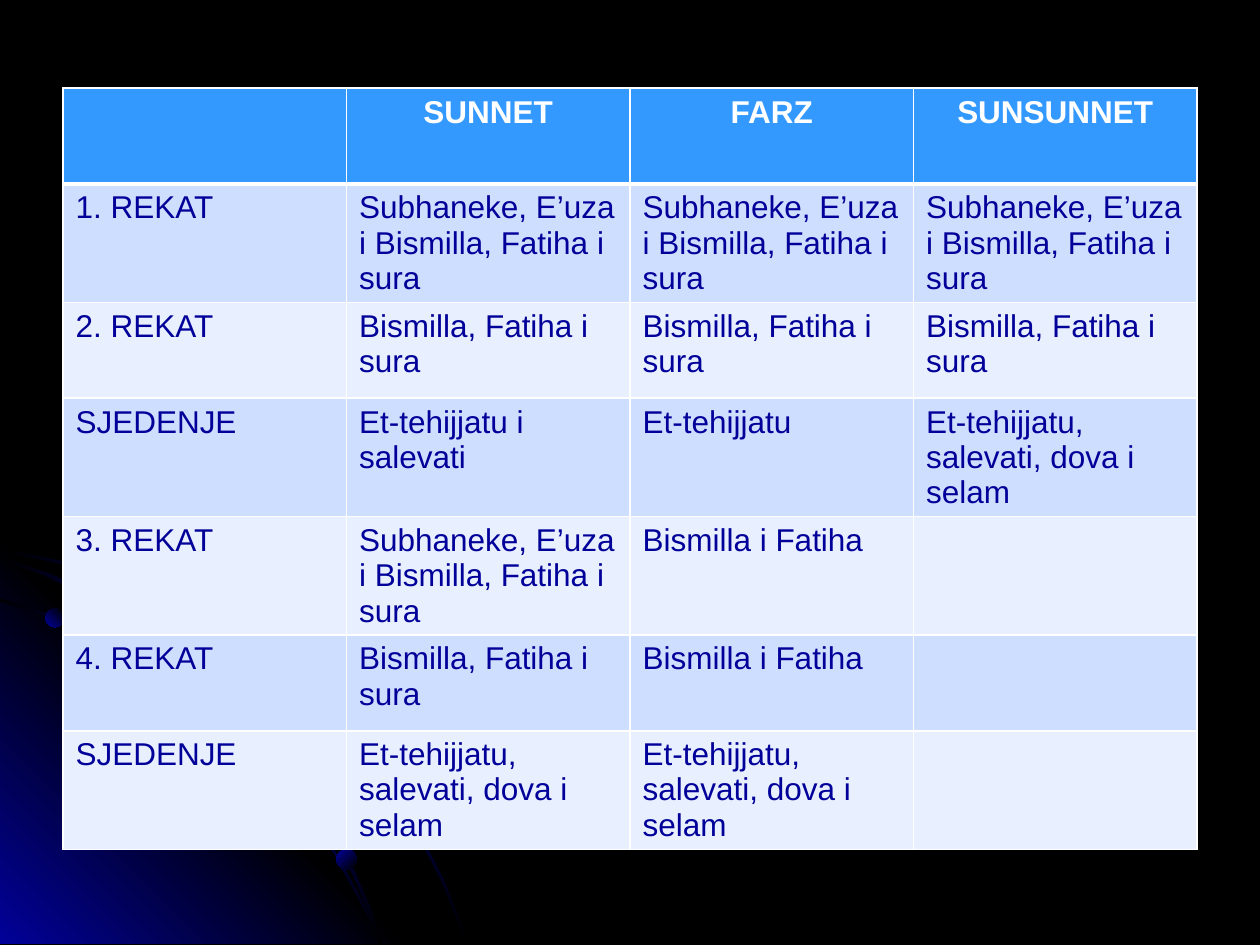
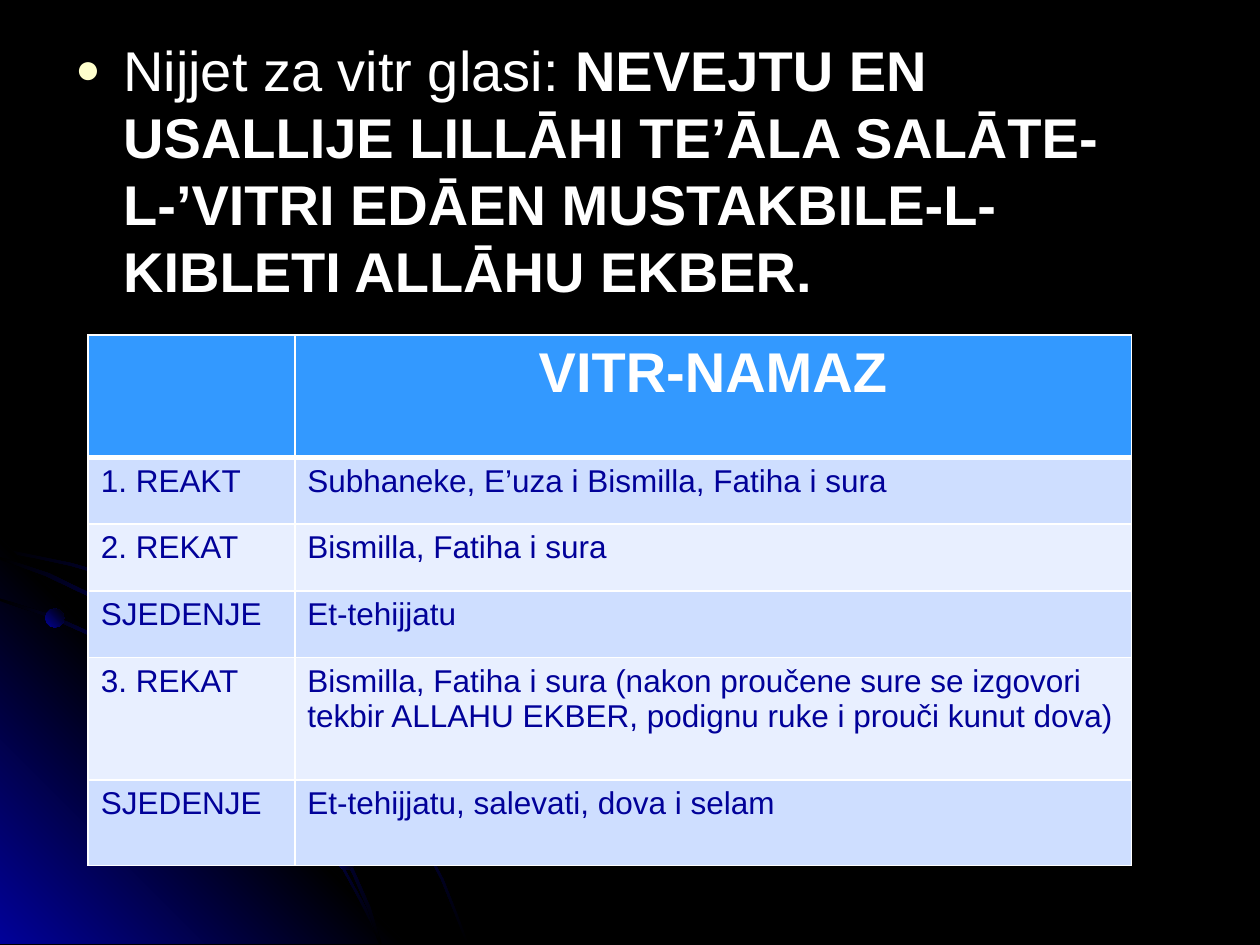
from lxml.etree import SubElement
from pptx import Presentation
from pptx.dml.color import RGBColor
from pptx.enum.shapes import MSO_SHAPE as SHAPE
from pptx.enum.text import PP_ALIGN as ALIGN
from pptx.oxml.ns import qn
from pptx.util import Inches, Pt

FONT = "Arial"
BLACK, WHITE, NAVY = "000000", "FFFFFF", "010199"
HEADER, BANDS = "3399FF", ("CEDEFF", "E8EFFF")
BULLET = "FFFFCC"


def rgb(color):
    return RGBColor.from_string(color)


def paint_gradient(shape, colors, angle):
    """Fill with evenly spaced colours; the angle runs counterclockwise."""
    shape.shadow.inherit = False
    shape.line.fill.background()
    shape.fill.gradient()
    shape.fill.gradient_angle = angle
    stops = shape._element.spPr.find(".//" + qn("a:gsLst"))
    stops.clear()
    for number, color in enumerate(colors):
        stop = SubElement(stops, qn("a:gs"), pos=str(100000 * number // (len(colors) - 1)))
        SubElement(stop, qn("a:srgbClr"), val=color)


# Background decoration: corner wedge, thin arcs and beads
upper_arc = [
    (0.57, 4.47), (0.28, 4.41), (0, 4.35), (0, 4.38), (0.28, 4.43), (0.56, 4.49),
    (0.97, 4.61), (1.35, 4.78), (1.73, 4.99), (2.08, 5.23), (2.41, 5.49), (2.71, 5.79),
    (2.98, 6.12), (3.23, 6.49), (3.37, 6.73), (3.5, 6.98), (3.6, 7.23), (3.7, 7.49),
    (3.72, 7.49), (3.62, 7.23), (3.52, 6.98), (3.39, 6.73), (3.25, 6.48), (3, 6.11),
    (2.72, 5.78), (2.42, 5.48), (2.09, 5.21), (1.74, 4.97), (1.36, 4.77), (0.98, 4.59),
]
lower_arc = [
    (2.85, 7.14), (2.94, 7.32), (3.01, 7.49), (3.03, 7.49), (2.96, 7.3), (2.86, 7.12),
    (2.66, 6.76), (2.42, 6.4), (2.15, 6.06), (1.84, 5.76), (1.52, 5.49), (1.17, 5.26),
    (0.79, 5.05), (0.41, 4.88), (0, 4.75), (0, 4.77), (0.39, 4.9), (0.77, 5.07),
    (1.15, 5.28), (1.5, 5.51), (1.83, 5.78), (2.13, 6.08), (2.4, 6.41), (2.65, 6.77),
]
middle_arc = [
    (0, 4.42), (0, 4.44), (0.36, 4.57), (0.74, 4.75), (1.09, 4.94), (1.42, 5.18),
    (1.73, 5.44), (2.02, 5.75), (2.27, 6.05), (2.52, 6.41), (2.67, 6.67), (2.8, 6.94),
    (2.92, 7.22), (3.01, 7.49), (3.03, 7.49), (2.94, 7.2), (2.82, 6.93), (2.69, 6.65),
    (2.54, 6.39), (2.29, 6.03), (2.04, 5.73), (1.75, 5.43), (1.44, 5.16), (1.11, 4.93),
    (0.76, 4.73), (0.39, 4.55),
]
wedge = [(3.22, 7.49), (0, 7.49), (0, 4.27)]
arc_colors = (BLACK, NAVY, BLACK)
outlines = [
    (upper_arc, arc_colors, 315),
    (wedge, (NAVY, BLACK, NAVY), 45),
    (lower_arc, arc_colors, 315),
    (middle_arc, arc_colors, 315),
]
beads = [(0.36, 4.83, 0.15, 45), (2.67, 6.74, 0.16, 315), (1.37, 4.73, 0.21, 45)]

# Table contents
opening = "Subhaneke, E’uza i Bismilla, Fatiha i sura"
sura = "Bismilla, Fatiha i sura"
fatiha = "Bismilla i Fatiha"
sitting = "Et-tehijjatu"
closing = "Et-tehijjatu, salevati, dova i selam"
prayer_rows = [
    ("", "SUNNET", "FARZ", "SUNSUNNET"),
    ("1. REKAT", opening, opening, opening),
    ("2. REKAT", sura, sura, sura),
    ("SJEDENJE", "Et-tehijjatu i salevati", sitting, closing),
    ("3. REKAT", opening, fatiha, ""),
    ("4. REKAT", sura, fatiha, ""),
    ("SJEDENJE", closing, closing, ""),
]
vitr_rows = [
    ("", "VITR-NAMAZ"),
    ("1. REAKT", opening),
    ("2. REKAT", sura),
    ("SJEDENJE", sitting),
    ("3. REKAT", sura + " (nakon proučene sure se izgovori tekbir ALLAHU EKBER, "
                        "podignu ruke i prouči kunut dova)"),
    ("SJEDENJE", closing),
]

deck = Presentation()
deck.slide_width, deck.slide_height = Inches(10), Inches(7.5)
master_fill = deck.slide_master.background.fill
master_fill.solid()
master_fill.fore_color.rgb = rgb(BLACK)

# Pages with the shared decoration
pages = [deck.slides.add_slide(deck.slide_layouts[6]) for _ in range(2)]
for page in pages:
    for points, colors, angle in outlines:
        corners = [(Inches(x), Inches(y)) for x, y in points]
        builder = page.shapes.build_freeform(*corners[0])
        builder.add_line_segments(corners[1:], close=True)
        paint_gradient(builder.convert_to_shape(), colors, angle)
    for left, top, size, angle in beads:
        bead = page.shapes.add_shape(
            SHAPE.OVAL, Inches(left), Inches(top), Inches(size), Inches(size))
        paint_gradient(bead, (NAVY, BLACK), angle)
prayer_page, vitr_page = pages

# Intention text on the vitr page
box = vitr_page.shapes.add_textbox(Inches(0.5), Inches(0.23), Inches(9), Inches(2.4))
box.text_frame.word_wrap = True
para = box.text_frame.paragraphs[0]
para.space_before = Pt(6.4)
layout = para._p.get_or_add_pPr()
layout.set("marL", str(Inches(0.38)))
layout.set("indent", str(-Inches(0.38)))
SubElement(SubElement(layout, qn("a:buClr")), qn("a:srgbClr"), val=BULLET)
SubElement(layout, qn("a:buSzPct"), val="75000")
SubElement(layout, qn("a:buFont"), typeface=FONT)
SubElement(layout, qn("a:buChar"), char="●")
para.font.name, para.font.size = FONT, Pt(32)
para.font.color.rgb = rgb(WHITE)
para.add_run().text = "Nijjet za vitr glasi: "
span = para.add_run()
span.text = ("NEVEJTU EN USALLIJE LILLĀHI TE’ĀLA SALĀTE-L-’VITRI EDĀEN "
             "MUSTAKBILE-L-KIBLETI ALLĀHU EKBER.")
span.font.bold = True

# Tables: page, rows, left, top, column widths, row heights, header size
tables = [
    (prayer_page, prayer_rows, 0.5, 0.7, [2.25] * 4, [0.76] * 7, 18),
    (vitr_page, vitr_rows, 0.7, 2.66, [1.64, 6.64],
     [0.97, 0.53, 0.53, 0.53, 0.97, 0.68], 32),
]
for page, rows, left, top, widths, heights, header_size in tables:
    table = page.shapes.add_table(
        len(rows), len(widths), Inches(left), Inches(top),
        Inches(sum(widths)), Inches(sum(heights))).table
    for column, width in zip(table.columns, widths):
        column.width = Inches(width)
    for number, texts in enumerate(rows):
        table.rows[number].height = Inches(heights[number])
        is_header = number == 0
        thick_side = {0: "a:lnB", 1: "a:lnT"}.get(number)
        for cell, text in zip(table.rows[number].cells, texts):
            borders = cell._tc.get_or_add_tcPr()
            for side in ("a:lnL", "a:lnR", "a:lnT", "a:lnB"):
                weight = Pt(3 if side == thick_side else 1)
                line = SubElement(borders, qn(side), w=str(weight))
                SubElement(SubElement(line, qn("a:solidFill")), qn("a:srgbClr"), val=WHITE)
            cell.fill.solid()
            cell.fill.fore_color.rgb = rgb(HEADER if is_header else BANDS[(number - 1) % 2])
            cell.text = text
            para = cell.text_frame.paragraphs[0]
            para.alignment = ALIGN.CENTER if is_header else ALIGN.LEFT
            para.font.name = FONT
            para.font.size = Pt(header_size if is_header else 18)
            para.font.bold = is_header
            para.font.color.rgb = rgb(WHITE if is_header else NAVY)

deck.save("out.pptx")
